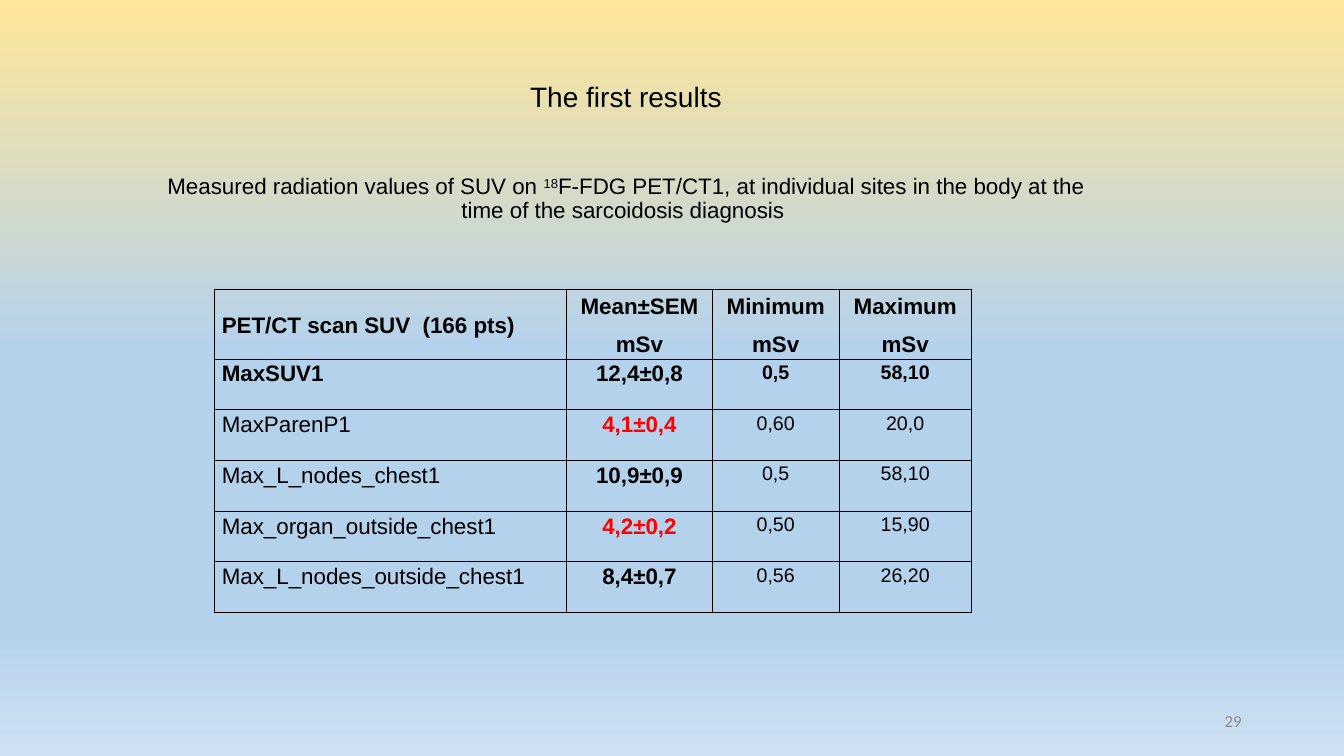
from pptx import Presentation
from pptx.dml.color import RGBColor
from pptx.enum.text import MSO_ANCHOR, PP_ALIGN
from pptx.oxml import parse_xml
from pptx.oxml.ns import nsdecls, qn
from pptx.util import Pt

BLACK, RED, GREY = "000000", "FF0000", "8C8C8C"
BACKGROUND_STOPS = [(0, "FFE699"), (46, "B5D2EC"), (83, "B5D2EC"), (100, "CEE1F2")]
COLUMN_WIDTHS = [251.4, 104, 90.7, 94.3]
HEADER_HEIGHT, ROW_HEIGHT = 46.4, 36.2
HEADERS = [["PET/CT scan SUV  (166 pts)"], ["Mean±SEM", "mSv"], ["Minimum", "mSv"], ["Maximum", "mSv"]]
RESULTS = [
    ("MaxSUV1", "12,4±0,8", "0,5", "58,10"),
    ("MaxParenP1", "4,1±0,4", "0,60", "20,0"),
    ("Max_L_nodes_chest1", "10,9±0,9", "0,5", "58,10"),
    ("Max_organ_outside_chest1", "4,2±0,2", "0,50", "15,90"),
    ("Max_L_nodes_outside_chest1", "8,4±0,7", "0,56", "26,20"),
]
LOW_MEANS = ("4,1±0,4", "4,2±0,2")


def color(value):
    """Return the colour for a hex string."""
    return RGBColor.from_string(value)


def set_gradient_background(slide, stops):
    """Fill the slide background with a vertical gradient."""
    stop_xml = "".join(
        f'<a:gs pos="{position * 1000}"><a:srgbClr val="{value}"/></a:gs>'
        for position, value in stops
    )
    background = parse_xml(
        f'<p:bg {nsdecls("p", "a")}><p:bgPr><a:gradFill rotWithShape="1">'
        f'<a:gsLst>{stop_xml}</a:gsLst><a:lin ang="5400000" scaled="0"/>'
        "</a:gradFill><a:effectLst/></p:bgPr></p:bg>"
    )
    slide.element.find(qn("p:cSld")).insert(0, background)


def add_run(paragraph, text, size, value=BLACK, bold=False, font="Arial", superscript=False):
    """Add one formatted run to a paragraph."""
    run = paragraph.add_run()
    run.text = text
    run.font.name = font
    run.font.size = Pt(size)
    run.font.bold = bold
    run.font.color.rgb = color(value)
    if superscript:
        run._r.get_or_add_rPr().set("baseline", "30000")


def add_text_frame(slide, left, top, width, height):
    """Add a wrapping, vertically centred text box and return its frame."""
    frame = slide.shapes.add_textbox(Pt(left), Pt(top), Pt(width), Pt(height)).text_frame
    frame.word_wrap = True
    frame.vertical_anchor = MSO_ANCHOR.MIDDLE
    return frame


def add_heading(slide):
    """Add the title and the description of the measurements."""
    frame = add_text_frame(slide, 98, 44, 698.4, 131.6)
    title, description = frame.paragraphs[0], frame.add_paragraph()
    for paragraph in (title, description):
        paragraph.alignment = PP_ALIGN.CENTER
        paragraph.line_spacing = 0.9
    title.space_after = Pt(44)
    add_run(title, "The first results", 20)
    add_run(description, "Measured radiation values of SUV on ", 16)
    add_run(description, "18", 16, superscript=True)
    add_run(description, "F-FDG PET/CT1, at individual sites in the body at the time of the sarcoidosis diagnosis ", 16)


def add_slide_number(slide, number):
    """Add the slide number at the lower right."""
    paragraph = add_text_frame(slide, 678, 500.5, 216, 28.8).paragraphs[0]
    paragraph.alignment = PP_ALIGN.RIGHT
    add_run(paragraph, number, 12, GREY, font="Calibri")


def set_borders(cell):
    """Draw a thin black line on every side of a cell."""
    properties = cell._tc.get_or_add_tcPr()
    for side in ("lnL", "lnR", "lnT", "lnB"):
        properties.append(parse_xml(
            f'<a:{side} {nsdecls("a")} w="{Pt(1)}"><a:solidFill>'
            f'<a:srgbClr val="{BLACK}"/></a:solidFill></a:{side}>'
        ))


def fill_cell(cell, lines, alignment, anchor, size, value, bold):
    """Format a cell and write its lines as paragraphs."""
    set_borders(cell)
    cell.fill.background()
    cell.vertical_anchor = anchor
    cell.margin_left = cell.margin_right = Pt(5)
    cell.margin_top, cell.margin_bottom = Pt(0.7), Pt(0)
    frame = cell.text_frame
    for index, line in enumerate(lines):
        paragraph = frame.add_paragraph() if index else frame.paragraphs[0]
        paragraph.alignment = alignment
        paragraph.line_spacing = 1.07
        paragraph.space_after = Pt(8)
        add_run(paragraph, line, size, value, bold)


def add_results_table(slide):
    """Add the table of SUV values."""
    height = HEADER_HEIGHT + ROW_HEIGHT * len(RESULTS)
    table = slide.shapes.add_table(
        len(RESULTS) + 1, len(HEADERS), Pt(153.4), Pt(206.8), Pt(sum(COLUMN_WIDTHS)), Pt(height)
    ).table
    table.horz_banding = False
    for column, width in zip(table.columns, COLUMN_WIDTHS):
        column.width = Pt(width)
    for index, row in enumerate(table.rows):
        row.height = Pt(ROW_HEIGHT if index else HEADER_HEIGHT)
    for column, lines in enumerate(HEADERS):
        alignment = PP_ALIGN.CENTER if column else PP_ALIGN.LEFT
        fill_cell(table.cell(0, column), lines, alignment, MSO_ANCHOR.MIDDLE, 16, BLACK, True)
    for row, values in enumerate(RESULTS, start=1):
        for column, text in enumerate(values):
            alignment = PP_ALIGN.CENTER if column else PP_ALIGN.LEFT
            size = 16 if column < 2 else 14
            value = RED if text in LOW_MEANS else BLACK
            bold = row == 1 or column == 1
            fill_cell(table.cell(row, column), [text], alignment, MSO_ANCHOR.TOP, size, value, bold)


def main():
    """Build and save the slide."""
    presentation = Presentation()
    presentation.slide_width, presentation.slide_height = Pt(960), Pt(540)
    slide = presentation.slides.add_slide(presentation.slide_layouts[6])
    set_gradient_background(slide, BACKGROUND_STOPS)
    add_heading(slide)
    add_slide_number(slide, "29")
    add_results_table(slide)
    presentation.save("out.pptx")


if __name__ == "__main__":
    main()
